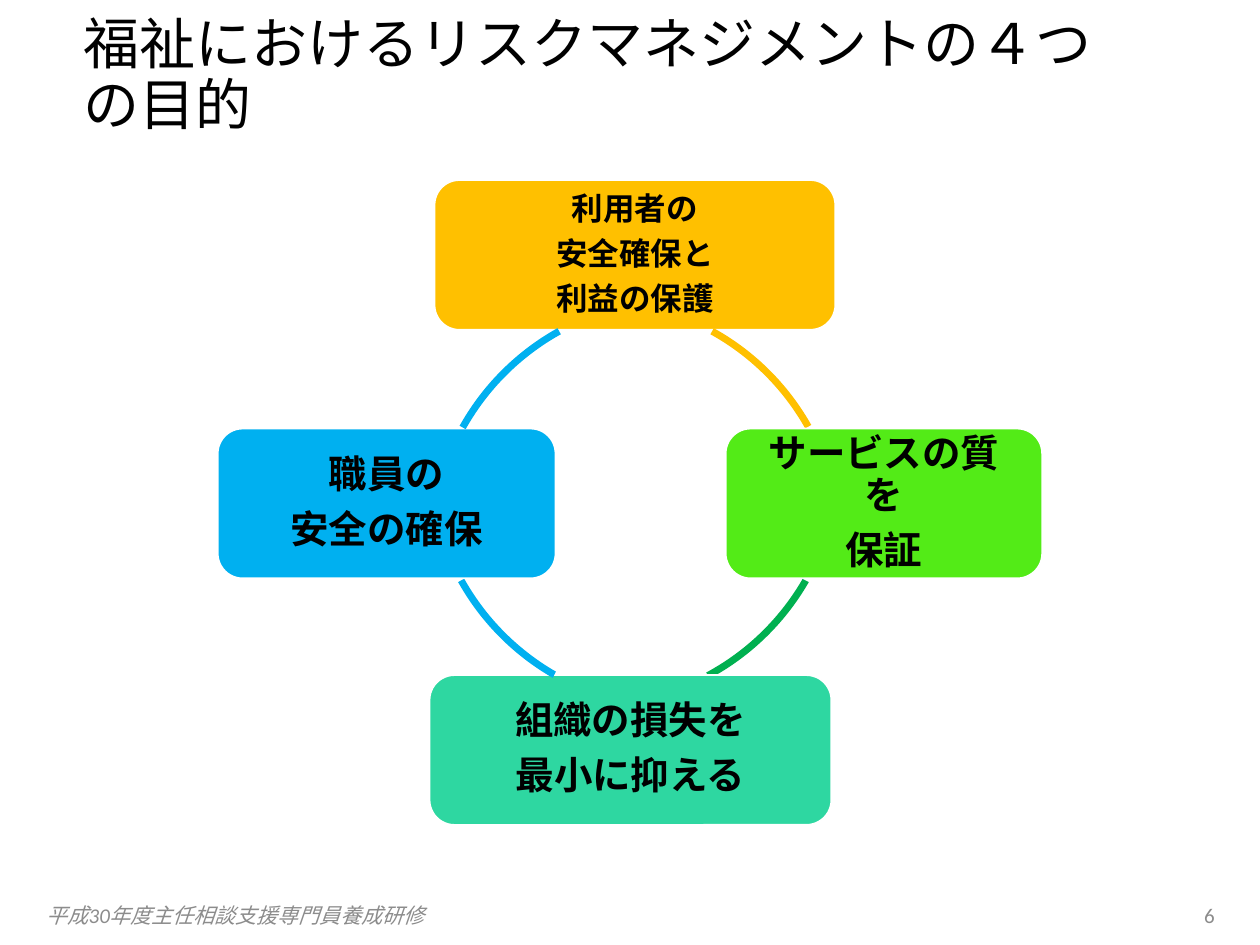
"""Build a slide showing the four aims of risk management in welfare as a cycle."""
from dataclasses import dataclass

from lxml.etree import SubElement
from pptx import Presentation
from pptx.dml.color import RGBColor
from pptx.enum.shapes import MSO_SHAPE as Preset
from pptx.enum.text import MSO_ANCHOR as Anchor, MSO_AUTO_SIZE as AutoSize, PP_ALIGN as Align
from pptx.oxml.ns import qn
from pptx.slide import Slide
from pptx.text.text import _Paragraph as Paragraph
from pptx.util import Cm, Pt

BLACK = RGBColor(0x00, 0x00, 0x00)
WHITE = RGBColor(0xFF, 0xFF, 0xFF)
GREY = RGBColor(0x8C, 0x8C, 0x8C)
AMBER = RGBColor(0xFF, 0xC0, 0x00)
LIME = RGBColor(0x53, 0xEB, 0x17)
GREEN = RGBColor(0x00, 0xB0, 0x50)
MINT = RGBColor(0x2E, 0xD7, 0xA1)
BLUE = RGBColor(0x00, 0xB0, 0xF0)

BOX_HEIGHT = 3.02
CIRCLE_DIAMETER = 10.03
ADJUSTMENT_PER_DEGREE = 0.6


@dataclass(frozen=True)
class Aim:
    lines: tuple[str, ...]
    left: float
    top: float
    width: float
    fill: RGBColor
    size: int = 22
    inset: float = 0.38


@dataclass(frozen=True)
class Arc:
    left: float
    top: float
    start: float
    end: float
    color: RGBColor


@dataclass(frozen=True)
class Footer:
    text: str
    left: float
    width: float
    align: Align
    italic: bool


CYCLE = (
    (Aim(("利用者の", "安全確保と", "利益の保護"), 8.76, 3.63, 8.08, AMBER, 18, 0.33),
     Arc(6.91, 6.05, 299, 330.6, AMBER)),
    (Aim(("サービスの質を", "保証"), 14.63, 8.64, 6.38, LIME),
     Arc(6.88, 4.19, 29.9, 61.7, GREEN)),
    (Aim(("組織の損失を", "最小に抑える"), 8.66, 13.61, 8.1, MINT),
     Arc(8.66, 4.24, 119.9, 150.8, BLUE)),
    (Aim(("職員の", "安全の確保"), 4.39, 8.64, 6.81, BLUE),
     Arc(8.69, 6.05, 209.2, 241, BLUE)),
)
FOOTERS = (
    Footer("平成30年度主任相談支援専門員養成研修", 0.46, 8.59, Align.CENTER, True),
    Footer("6", 19.02, 5.72, Align.RIGHT, False),
)


def format_paragraph(paragraph: Paragraph, align: Align, font: str, size: int,
                     color: RGBColor) -> None:
    """Set the alignment and font of a whole paragraph."""
    paragraph.alignment = align
    paragraph.font.name = font
    paragraph.font.size = Pt(size)
    paragraph.font.color.rgb = color


def set_relative_space_after(paragraph: Paragraph, percent: int) -> None:
    """Set the space after a paragraph as a share of its text size."""
    paragraph.space_after = Pt(0)
    space_after = paragraph._p.pPr.find(qn("a:spcAft"))
    space_after.clear()
    SubElement(space_after, qn("a:spcPct"), val=str(percent * 1000))


def set_title(slide: Slide, text: str) -> None:
    """Place and fill the title placeholder."""
    title = slide.shapes.title
    title.left, title.top, title.width, title.height = Cm(1.42), Cm(0.28), Cm(21.89), Cm(2.54)
    frame = title.text_frame
    frame.text = text
    frame.word_wrap = True
    frame.auto_size = AutoSize.NONE
    frame.vertical_anchor = Anchor.MIDDLE
    paragraph = frame.paragraphs[0]
    paragraph.line_spacing = 0.9
    format_paragraph(paragraph, Align.LEFT, "Arial", 32, BLACK)


def draw_aim(slide: Slide, aim: Aim) -> None:
    """Draw one rounded box with its text."""
    shape = slide.shapes.add_shape(Preset.ROUNDED_RECTANGLE, Cm(aim.left), Cm(aim.top),
                                   Cm(aim.width), Cm(BOX_HEIGHT))
    shape.shadow.inherit = False
    shape.fill.solid()
    shape.fill.fore_color.rgb = aim.fill
    shape.line.color.rgb = WHITE
    shape.line.width = Pt(1)
    frame = shape.text_frame
    frame.text = "\n".join(aim.lines)
    frame.word_wrap = True
    frame.vertical_anchor = Anchor.MIDDLE
    frame.margin_left = frame.margin_right = Cm(aim.inset)
    frame.margin_top = frame.margin_bottom = Cm(aim.inset)
    for paragraph in frame.paragraphs:
        format_paragraph(paragraph, Align.CENTER, "Calibri", aim.size, BLACK)
        paragraph.font.bold = True
        paragraph.line_spacing = 0.9
        set_relative_space_after(paragraph, 35)


def draw_arc(slide: Slide, arc: Arc) -> None:
    """Draw one arc between two neighbouring boxes."""
    shape = slide.shapes.add_shape(Preset.ARC, Cm(arc.left), Cm(arc.top),
                                   Cm(CIRCLE_DIAMETER), Cm(CIRCLE_DIAMETER))
    shape.shadow.inherit = False
    shape.adjustments[0] = arc.start * ADJUSTMENT_PER_DEGREE
    shape.adjustments[1] = arc.end * ADJUSTMENT_PER_DEGREE
    shape.fill.background()
    shape.line.color.rgb = arc.color
    shape.line.width = Pt(4)


def draw_footer(slide: Slide, footer: Footer) -> None:
    """Draw one text at the foot of the slide."""
    box = slide.shapes.add_textbox(Cm(footer.left), Cm(17.93), Cm(footer.width), Cm(1.02))
    frame = box.text_frame
    frame.text = footer.text
    frame.word_wrap = True
    frame.vertical_anchor = Anchor.MIDDLE
    paragraph = frame.paragraphs[0]
    format_paragraph(paragraph, footer.align, "Calibri", 12, GREY)
    paragraph.font.italic = footer.italic


def main() -> None:
    """Build and save the presentation."""
    presentation = Presentation()
    presentation.slide_width, presentation.slide_height = Cm(25.4), Cm(19.05)
    slide = presentation.slides.add_slide(presentation.slide_layouts.get_by_name("Title Only"))
    set_title(slide, "福祉におけるリスクマネジメントの４つの目的")
    for aim, arc in CYCLE:
        draw_aim(slide, aim)
        draw_arc(slide, arc)
    for footer in FOOTERS:
        draw_footer(slide, footer)
    presentation.save("out.pptx")


if __name__ == "__main__":
    main()
